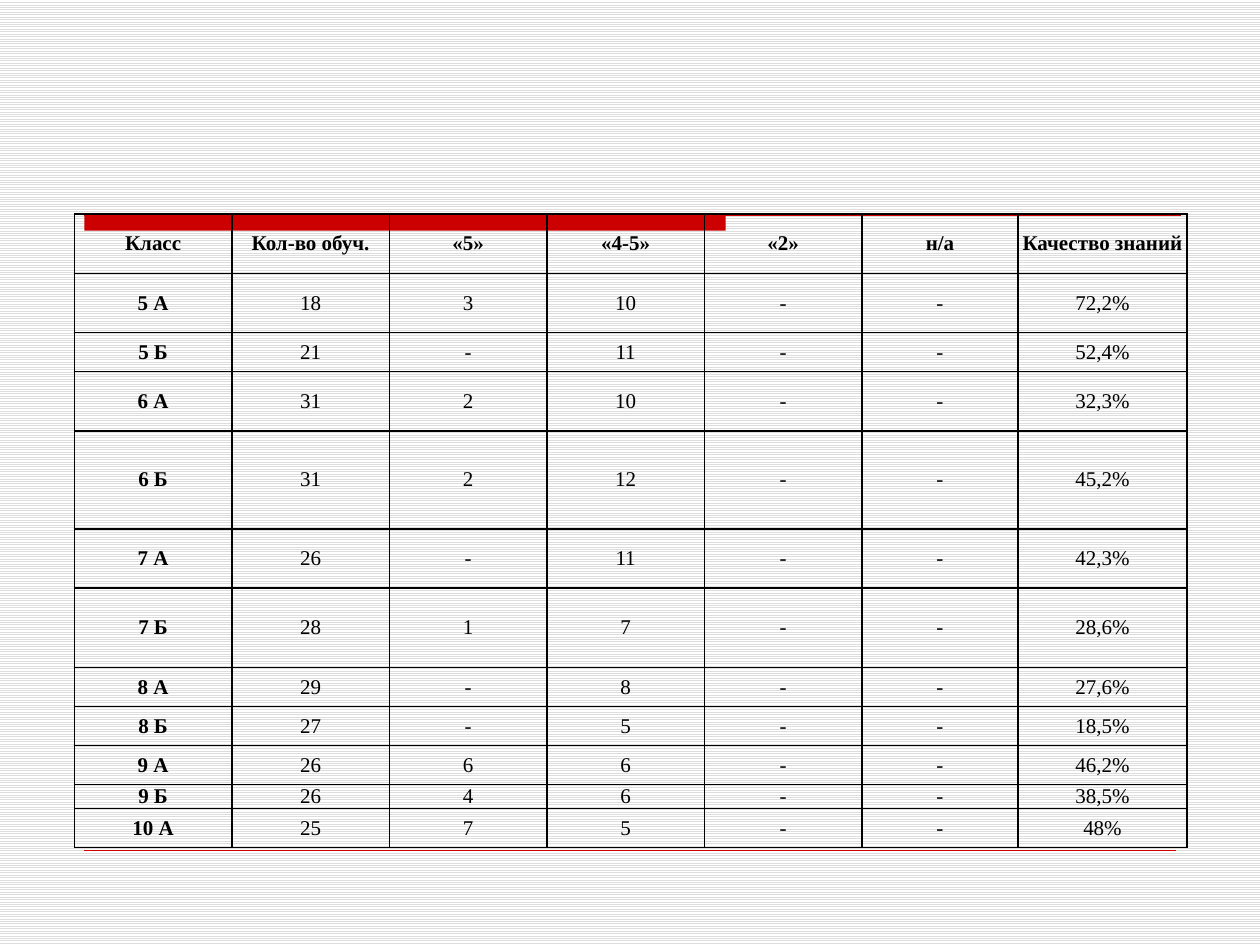
from lxml import etree
from pptx import Presentation, util as u
from pptx.dml.color import RGBColor
from pptx.enum import dml, shapes, text
from pptx.oxml import ns

COLORS = {"accent": "CC0000", "stripe": "DDDDDD", "paper": "FFFFFF", "ink": "000000"}
FONT = "Times New Roman"
HEADINGS = ["Класс", "Кол-во обуч.", "«5»", "«4-5»", "«2»", "н/а", "Качество знаний"]
# class, pupils, grade 5, grades 4-5, quality, row height; nobody has "2" or "н/а"
RESULTS = [
    ("5 А", "18", "3", "10", "72,2%", 0.47),
    ("5 Б", "21", "-", "11", "52,4%", 0.31),
    ("6 А", "31", "2", "10", "32,3%", 0.47),
    ("6 Б", "31", "2", "12", "45,2%", 0.78),
    ("7 А", "26", "-", "11", "42,3%", 0.47),
    ("7 Б", "28", "1", "7", "28,6%", 0.63),
    ("8 А", "29", "-", "8", "27,6%", 0.31),
    ("8 Б", "27", "-", "5", "18,5%", 0.31),
    ("9 А", "26", "6", "6", "46,2%", 0.31),
    ("9 Б", "26", "4", "6", "38,5%", 0.19),
    ("10 А", "25", "7", "5", "48%", 0.31),
]
HEADING_HEIGHT = 0.47
COLUMN_WIDTHS = [1.25] * 5 + [1.24, 1.34]


def color(name):
    return RGBColor.from_string(COLORS[name])


def paint_background(page):
    fill = page.background.fill
    fill.patterned()
    fill.pattern = dml.MSO_PATTERN.LIGHT_HORIZONTAL
    fill.fore_color.rgb = color("stripe")
    fill.back_color.rgb = color("paper")


def add_rule(page, left, top, width, points):
    """Draw a horizontal accent line."""
    rule = page.shapes.add_connector(
        shapes.MSO_CONNECTOR.STRAIGHT,
        u.Inches(left), u.Inches(top), u.Inches(left + width), u.Inches(top))
    rule.line.color.rgb = color("accent")
    rule.line.width = u.Pt(points)
    etree.SubElement(rule._element.spPr, ns.qn("a:effectLst"))


def add_title_bar(page, left, top, width, height):
    """Place a thick bar under the start of a full-width rule."""
    bar = page.shapes.add_shape(
        shapes.MSO_SHAPE.RECTANGLE,
        u.Inches(left), u.Inches(top), u.Inches(width * 0.585), u.Inches(height))
    bar.shadow.inherit = False
    bar.fill.solid()
    bar.fill.fore_color.rgb = color("accent")
    bar.line.fill.background()
    add_rule(page, left, top, width, 0.75)


def set_borders(cell):
    properties = cell._tc.get_or_add_tcPr()
    for position, side in enumerate(("lnL", "lnR", "lnT", "lnB")):
        border = etree.Element(ns.qn(f"a:{side}"), w=str(u.Pt(1)))
        fill = etree.SubElement(border, ns.qn("a:solidFill"))
        etree.SubElement(fill, ns.qn("a:srgbClr"), val=COLORS["ink"])
        properties.insert(position, border)


def fill_cell(cell, words, bold):
    cell.fill.background()
    set_borders(cell)
    cell.margin_left = cell.margin_right = u.Inches(0.03)
    cell.margin_top = cell.margin_bottom = 0
    cell.vertical_anchor = text.MSO_ANCHOR.MIDDLE
    para = cell.text_frame.paragraphs[0]
    para.text = words
    para.alignment = text.PP_ALIGN.CENTER
    font = para.runs[0].font
    font.name, font.size, font.bold = FONT, u.Pt(12), bold
    font.color.rgb = color("ink")


def add_results_table(page, left, top):
    rows = [HEADINGS] + [[*result[:4], "-", "-", result[4]] for result in RESULTS]
    heights = [HEADING_HEIGHT] + [result[5] for result in RESULTS]
    table = page.shapes.add_table(
        len(rows), len(HEADINGS), u.Inches(left), u.Inches(top),
        u.Inches(sum(COLUMN_WIDTHS)), u.Inches(sum(heights))).table
    table.first_row = table.horz_banding = False
    for column, width in zip(table.columns, COLUMN_WIDTHS):
        column.width = u.Inches(width)
    for row_number, (words, height) in enumerate(zip(rows, heights)):
        table.rows[row_number].height = u.Inches(height)
        for column_number, word in enumerate(words):
            fill_cell(table.cell(row_number, column_number), word,
                      bold=row_number == 0 or column_number == 0)


def main():
    deck = Presentation()
    deck.slide_width, deck.slide_height = u.Inches(10), u.Inches(7.5)
    page = deck.slides.add_slide(deck.slide_layouts[6])
    paint_background(page)
    add_title_bar(page, 0.67, 1.71, 8.7, 0.12)
    add_rule(page, 0.67, 6.75, 8.66, 0.25)
    add_results_table(page, 0.59, 1.7)
    deck.save("out.pptx")


if __name__ == "__main__":
    main()
